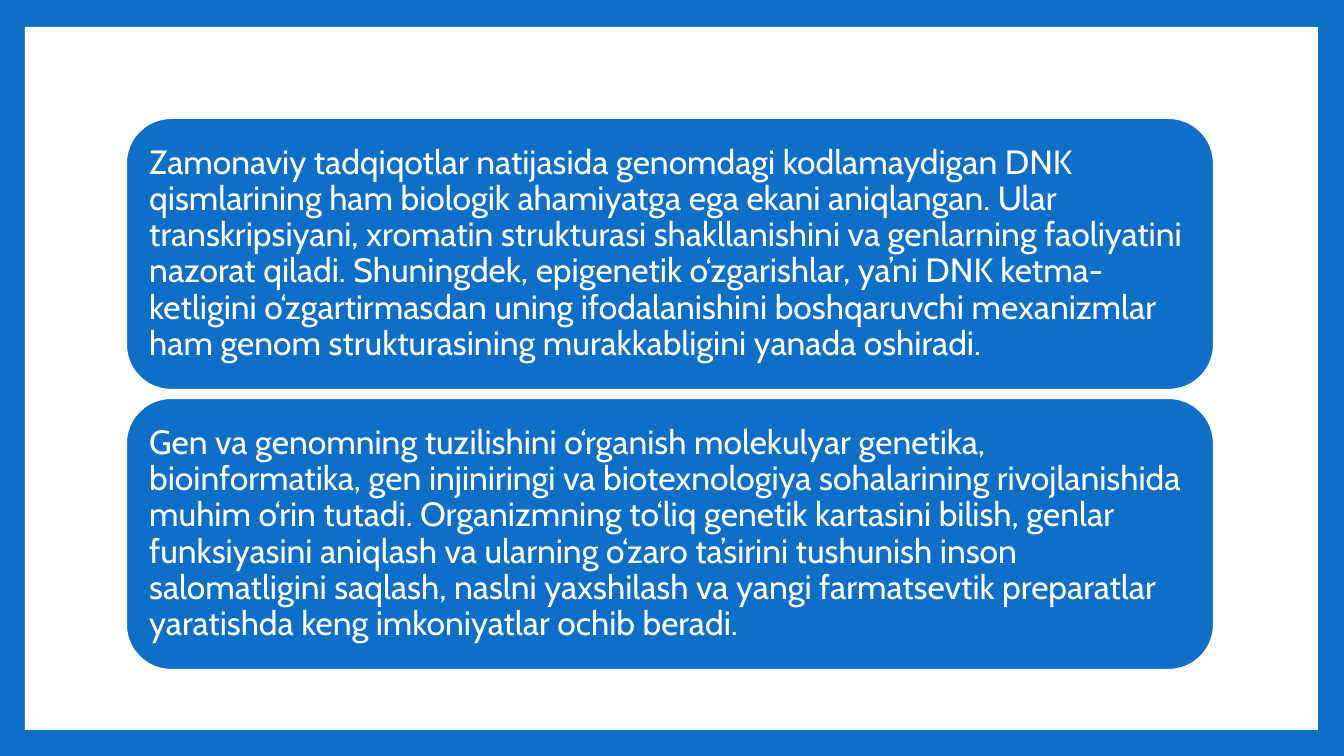
from dataclasses import dataclass

from pptx import Presentation
from pptx.dml.color import RGBColor as Rgb
from pptx.enum.shapes import MSO_SHAPE as Kind
from pptx.enum.text import MSO_ANCHOR as Anchor, PP_ALIGN as Align
from pptx.util import Emu, Pt

SCALE = 914400 / 100.8


@dataclass(frozen=True)
class Theme:
    blue: Rgb = Rgb(0x0F, 0x6F, 0xC6)
    white: Rgb = Rgb(0xFF, 0xFF, 0xFF)
    font: str = "Cabin"
    size: float = 24
    edge: float = 1.5


THEME = Theme()

CARDS = [
    "Zamonaviy tadqiqotlar natijasida genomdagi kodlamaydigan DNK qismlarining "
    "ham biologik ahamiyatga ega ekani aniqlangan. Ular transkripsiyani, xromatin "
    "strukturasi shakllanishini va genlarning faoliyatini nazorat qiladi. "
    "Shuningdek, epigenetik o‘zgarishlar, ya’ni DNK ketma-ketligini "
    "o‘zgartirmasdan uning ifodalanishini boshqaruvchi mexanizmlar ham genom "
    "strukturasining murakkabligini yanada oshiradi.",
    "Gen va genomning tuzilishini o‘rganish molekulyar genetika, bioinformatika, "
    "gen injiniringi va biotexnologiya sohalarining rivojlanishida muhim o‘rin "
    "tutadi. Organizmning to‘liq genetik kartasini bilish, genlar funksiyasini "
    "aniqlash va ularning o‘zaro ta’sirini tushunish inson salomatligini saqlash, "
    "naslni yaxshilash va yangi farmatsevtik preparatlar yaratishda keng "
    "imkoniyatlar ochib beradi.",
]


def px(count):
    return Emu(round(count * SCALE))


def add_box(slide, kind, left, top, width, height, fill, line=None):
    box = slide.shapes.add_shape(kind, px(left), px(top), px(width), px(height))
    box.shadow.inherit = False
    box.fill.solid()
    box.fill.fore_color.rgb = fill
    if line is None:
        box.line.fill.background()
    else:
        box.line.color.rgb = line
        box.line.width = Pt(THEME.edge)
    return box


def put_text(box, text, *, size=THEME.size, color=THEME.white, inset=10,
             align=Align.LEFT, anchor=Anchor.MIDDLE, lead=0.9):
    frame = box.text_frame
    frame.word_wrap = True
    frame.vertical_anchor = anchor
    frame.margin_left = frame.margin_right = px(inset)
    frame.margin_top = frame.margin_bottom = px(inset)
    para = frame.paragraphs[0]
    para.alignment = align
    para.line_spacing = lead
    run = para.add_run()
    run.text = text
    run.font.name = THEME.font
    run.font.size = Pt(size)
    run.font.color.rgb = color


def add_card(slide, top, text):
    card = add_box(slide, Kind.ROUNDED_RECTANGLE, 126, top, 1088, 272,
                   THEME.blue, THEME.white)
    put_text(card, text)


def main():
    deck = Presentation()
    deck.slide_width, deck.slide_height = px(1344), px(756)
    slide = deck.slides.add_slide(deck.slide_layouts[6])
    back = slide.background.fill
    back.solid()
    back.fore_color.rgb = THEME.blue
    add_box(slide, Kind.RECTANGLE, 25, 27, 1293, 703, THEME.white)
    for row, text in enumerate(CARDS):
        add_card(slide, 118 + row * 280, text)
    deck.save("out.pptx")


if __name__ == "__main__":
    main()
